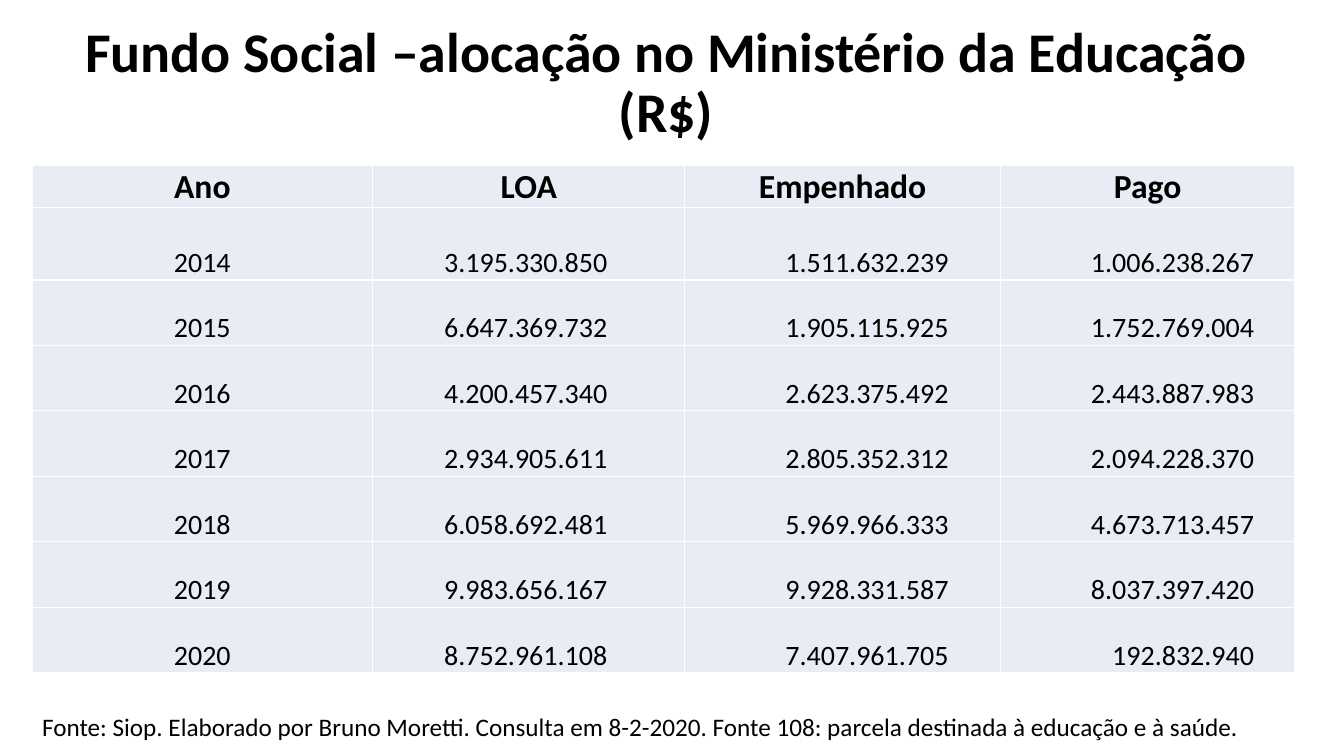
from lxml import etree
from pptx import Presentation
from pptx.dml.color import RGBColor
from pptx.enum.text import MSO_ANCHOR, MSO_AUTO_SIZE, PP_ALIGN
from pptx.oxml.ns import qn
from pptx.util import Cm, Pt

LEFT, CENTER, RIGHT = PP_ALIGN.LEFT, PP_ALIGN.CENTER, PP_ALIGN.RIGHT
BOTTOM = MSO_ANCHOR.BOTTOM
NO_AUTOFIT = MSO_AUTO_SIZE.NONE

BLACK = RGBColor(0x00, 0x00, 0x00)
WHITE = RGBColor(0xFF, 0xFF, 0xFF)
PALE_BLUE = RGBColor(0xE9, 0xEB, 0xF5)
FONT = "Calibri"

TITLE = "Fundo Social –alocação no Ministério da Educação\n(R$)"
HEADER = ("Ano", "LOA", "Empenhado", "Pago")
ROWS = [
    ("2014", "3.195.330.850", "1.511.632.239", "1.006.238.267"),
    ("2015", "6.647.369.732", "1.905.115.925", "1.752.769.004"),
    ("2016", "4.200.457.340", "2.623.375.492", "2.443.887.983"),
    ("2017", "2.934.905.611", "2.805.352.312", "2.094.228.370"),
    ("2018", "6.058.692.481", "5.969.966.333", "4.673.713.457"),
    ("2019", "9.983.656.167", "9.928.331.587", "8.037.397.420"),
    ("2020", "8.752.961.108", "7.407.961.705", "192.832.940"),
]
SOURCE = ("Fonte: Siop. Elaborado por Bruno Moretti. Consulta em 8-2-2020. "
          "Fonte 108: parcela destinada à educação e à saúde.")

MARGIN_LEFT = Cm(0.81)
TEXT_WIDTH = Cm(31.95)
COLUMN_WIDTHS = (Cm(8.58), Cm(7.87), Cm(7.95), Cm(7.42))
NUMBER_INDENTS = (None, Cm(1.95), Cm(1.3), Cm(1.02))
ROW_HEIGHTS = [Cm(1.02), Cm(1.83)] + [Cm(1.65)] * (len(ROWS) - 1)
CELL_INSET = Cm(0.02)


def write(frame, text, size, bold=False, align=LEFT, spacing=None):
    para = frame.paragraphs[0]
    para.alignment = align
    if spacing:
        para.line_spacing = spacing
    for index, line in enumerate(text.split("\n")):
        if index:
            para.add_line_break()
        span = para.add_run()
        span.text = line
        span.font.name = FONT
        span.font.size = Pt(size)
        span.font.bold = bold
        span.font.color.rgb = BLACK


def add_borders(cell):
    properties = cell._tc.get_or_add_tcPr()
    for side in ("a:lnL", "a:lnR", "a:lnT", "a:lnB"):
        line = etree.SubElement(properties, qn(side), w=str(Pt(1)))
        fill = etree.SubElement(line, qn("a:solidFill"))
        etree.SubElement(fill, qn("a:srgbClr"), val=str(WHITE))


def add_fund_table(slide):
    total_width, total_height = sum(COLUMN_WIDTHS), sum(ROW_HEIGHTS)
    table = slide.shapes.add_table(
        len(ROW_HEIGHTS), len(COLUMN_WIDTHS),
        MARGIN_LEFT, Cm(4.17), total_width, total_height).table
    table.first_row = table.horz_banding = False
    for column, width in zip(table.columns, COLUMN_WIDTHS):
        column.width = width
    for row, height in zip(table.rows, ROW_HEIGHTS):
        row.height = height

    for row_index, values in enumerate([HEADER] + ROWS):
        is_header = row_index == 0
        for column_index, value in enumerate(values):
            cell = table.cell(row_index, column_index)
            indent = None if is_header else NUMBER_INDENTS[column_index]
            add_borders(cell)
            cell.fill.solid()
            cell.fill.fore_color.rgb = PALE_BLUE
            cell.vertical_anchor = BOTTOM
            cell.margin_left = cell.margin_top = CELL_INSET
            cell.margin_right = indent or CELL_INSET
            cell.margin_bottom = 0
            write(cell.text_frame, value, 24 if is_header else 20,
                  bold=is_header, align=RIGHT if indent else CENTER)


def main():
    deck = Presentation()
    deck.slide_width, deck.slide_height = Cm(33.87), Cm(19.05)
    slide = deck.slides.add_slide(deck.slide_layouts[5])

    title = slide.shapes.title
    title.left, title.top = MARGIN_LEFT, Cm(0.38)
    title.width, title.height = TEXT_WIDTH, Cm(3.4)
    title.text_frame.auto_size = NO_AUTOFIT
    title.text_frame.vertical_anchor = BOTTOM
    write(title.text_frame, TITLE, 40, bold=True, align=CENTER, spacing=0.9)

    add_fund_table(slide)

    box = slide.shapes.add_textbox(MARGIN_LEFT, Cm(17.8), TEXT_WIDTH, Cm(1.02))
    box.text_frame.word_wrap = True
    write(box.text_frame, SOURCE, 18)

    deck.save("out.pptx")


if __name__ == "__main__":
    main()
